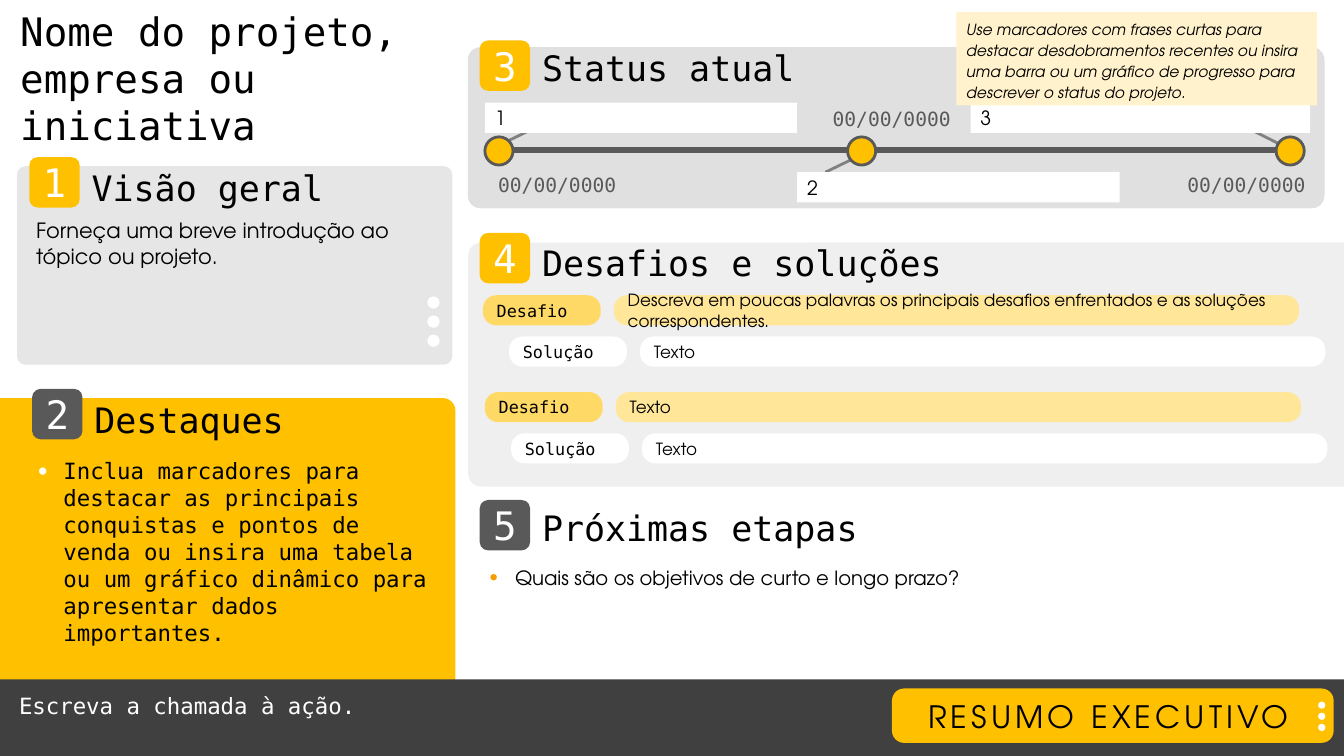
from typing import NamedTuple, Optional

from lxml.etree import SubElement
from pptx import Presentation
from pptx.dml.color import RGBColor
from pptx.enum.shapes import MSO_CONNECTOR, MSO_SHAPE as Preset
from pptx.enum.text import MSO_ANCHOR as Anchor, MSO_AUTO_SIZE, PP_ALIGN as Align
from pptx.oxml.ns import qn
from pptx.util import Cm, Pt

MONO = "DejaVu Sans Mono"
SANS = "TeX Gyre Adventor"

BLACK = RGBColor(0x00, 0x00, 0x00)
WHITE = RGBColor(0xFF, 0xFF, 0xFF)
AMBER = RGBColor(0xFF, 0xC0, 0x00)
AMBER_MID = RGBColor(0xFF, 0xD9, 0x66)
AMBER_LIGHT = RGBColor(0xFF, 0xE6, 0x99)
CREAM = RGBColor(0xFF, 0xF2, 0xCC)
ORANGE = RGBColor(0xF5, 0x9C, 0x00)
CHARCOAL = RGBColor(0x40, 0x40, 0x40)
DARK_GREY = RGBColor(0x59, 0x59, 0x59)
MID_GREY = RGBColor(0x80, 0x80, 0x80)
STATUS_GREY = RGBColor(0xE0, 0xE0, 0xE0)
OVERVIEW_GREY = RGBColor(0xE7, 0xE6, 0xE6)
PALE_GREY = RGBColor(0xEF, 0xEF, 0xEF)

NO_INSETS = (0, 0, 0, 0)
TEXT_INSETS = (0.25, 0.13, 0.25, 0.13)
FIELD_INSETS = (0.25, 0, 0.25, 0)
PILL_INSETS = (0.25, 0, 0, 0)


class Area(NamedTuple):
    """Left, top, width and height in centimetres."""
    left: float
    top: float
    width: float
    height: float


class Section(NamedTuple):
    title: str
    left: float
    top: float
    title_top: float
    title_width: float
    color: RGBColor


class Milestone(NamedTuple):
    field: Area
    dot_left: float
    date_left: float
    date_top: float
    leader: tuple[float, float, float, float]


class Challenge(NamedTuple):
    left: float
    top: float
    problem: str
    solution: str


SECTIONS = [
    Section("Visão geral", 0.74, 3.96, 4.27, 8.13, AMBER),
    Section("Destaques", 0.81, 9.8, 10.11, 8.15, DARK_GREY),
    Section("Status atual", 12.09, 1.02, 1.24, 10.44, AMBER),
    Section("Desafios e soluções", 12.09, 5.87, 6.15, 14.55, AMBER),
    Section("Próximas etapas", 12.09, 12.6, 12.83, 8.15, DARK_GREY),
]
MILESTONES = [
    Milestone(Area(12.22, 2.59, 7.87, 0.76), 12.22, 12.09, 4.24, (12.37, 3.76, 13.36, 3.28)),
    Milestone(Area(20.09, 4.34, 8.13, 0.76), 21.36, 20.52, 2.57, (20.8, 4.34, 21.79, 3.86)),
    Milestone(Area(24.46, 2.59, 8.56, 0.76), 32.16, 29.46, 4.24, (32.54, 3.78, 31.55, 3.28)),
]
CHALLENGES = [
    Challenge(12.17, 7.44, "Descreva em poucas palavras os principais desafios "
              "enfrentados e as soluções correspondentes.", "Texto"),
    Challenge(12.22, 9.88, "Texto", "Texto"),
]

deck = Presentation()
deck.slide_width, deck.slide_height = Cm(33.87), Cm(19.05)
page = deck.slides.add_slide(deck.slide_layouts[3])


def write(box, text: str, *, size: float, font: str = SANS, color: RGBColor = BLACK,
          align: Align = Align.LEFT, anchor: Anchor = Anchor.TOP, insets=TEXT_INSETS,
          italic: bool = False, tracking: float = 0, line_spacing: Optional[float] = None,
          bullet: Optional[RGBColor] = None) -> None:
    frame = box.text_frame
    frame.word_wrap = True
    frame.auto_size = MSO_AUTO_SIZE.NONE
    frame.vertical_anchor = anchor
    (frame.margin_left, frame.margin_top,
     frame.margin_right, frame.margin_bottom) = map(Cm, insets)
    para = frame.paragraphs[0]
    para.alignment = align
    para.space_before = Pt(0)
    if line_spacing:
        para.line_spacing = line_spacing
    if bullet is not None:
        para.space_after = Pt(6)
        add_bullet(box, bullet)
    span = para.add_run()
    span.text = text
    span.font.name, span.font.size = font, Pt(size)
    span.font.italic = italic
    span.font.color.rgb = color
    if tracking:
        for properties in box.element.iter(qn("a:rPr")):
            properties.set("spc", str(int(tracking * 100)))


def add_bullet(box, color: RGBColor) -> None:
    for properties in box.element.iter(qn("a:pPr")):
        properties.set("marL", str(Cm(0.64)))
        properties.set("indent", str(-Cm(0.64)))
        tint = SubElement(properties, qn("a:buClr"))
        SubElement(tint, qn("a:srgbClr"), val=str(color))
        SubElement(properties, qn("a:buSzPct"), val="120000")
        SubElement(properties, qn("a:buFont"), typeface="Arial")
        SubElement(properties, qn("a:buChar"), char="•")


def add_box(preset: Preset, area: Area, fill: RGBColor,
            corner: Optional[float] = None, outline: Optional[RGBColor] = None):
    box = page.shapes.add_shape(preset, *map(Cm, area))
    box.shadow.inherit = False
    box.fill.solid()
    box.fill.fore_color.rgb = fill
    if corner is not None:
        box.adjustments[0] = corner
    if outline is None:
        box.line.fill.background()
    else:
        box.line.color.rgb, box.line.width = outline, Pt(2)
    return box


def add_text(area: Area, text: str, **style) -> None:
    write(page.shapes.add_textbox(*map(Cm, area)), text, **style)


def add_line(ends: tuple[float, float, float, float], color: RGBColor, width: float) -> None:
    line = page.shapes.add_connector(MSO_CONNECTOR.STRAIGHT, *map(Cm, ends))
    line.line.color.rgb, line.line.width = color, Pt(width)
    SubElement(line.element.spPr, qn("a:effectLst"))


def add_dots(left: float, top: float, size: float, step: float) -> None:
    for index in range(3):
        add_box(Preset.OVAL, Area(left, top + index * step, size, size), WHITE)


def add_pill(left: float, top: float, width: float, fill: RGBColor, text: str, font: str) -> None:
    pill = add_box(Preset.ROUNDED_RECTANGLE, Area(left, top, width, 0.76), fill, corner=0.448)
    write(pill, text, size=12, font=font, anchor=Anchor.MIDDLE, insets=PILL_INSETS)


def fill_placeholder(index: int, area: Area, text: str, **style) -> None:
    box = page.placeholders[index]
    box.left, box.top, box.width, box.height = map(Cm, area)
    write(box, text, **style)
    box.element.getparent().append(box.element)  # bring to the front


# Background panels
challenge_panel = add_box(Preset.ROUND_2_SAME_RECTANGLE, Area(19.76, -1.85, 6.15, 22.07),
                          PALE_GREY, corner=0.054)
challenge_panel.rotation = 270
add_box(Preset.ROUNDED_RECTANGLE, Area(11.79, 1.19, 21.59, 4.06), STATUS_GREY, corner=0.079)
add_box(Preset.ROUND_1_RECTANGLE, Area(0, 10.03, 11.48, 9.02), AMBER, corner=0.036)
add_box(Preset.ROUNDED_RECTANGLE, Area(0.43, 4.19, 10.97, 5), OVERVIEW_GREY, corner=0.042)
add_dots(10.77, 7.47, 0.31, 0.48)

# Footer and badge
add_box(Preset.RECTANGLE, Area(0, 17.12, 33.87, 1.93), CHARCOAL)
add_text(Area(0.23, 17.3, 21.23, 0.94), "Escreva a chamada à ação.",
         size=16, font=MONO, color=WHITE)
add_box(Preset.ROUNDED_RECTANGLE, Area(22.48, 17.35, 11.13, 1.37), AMBER, corner=0.221)
add_text(Area(22.48, 17.45, 10.92, 1.19), "RESUMO EXECUTIVO",
         size=22, align=Align.CENTER, tracking=3)
add_dots(33.22, 17.68, 0.18, 0.28)

# Numbered section headings
for number, section in enumerate(SECTIONS, start=1):
    tile = add_box(Preset.ROUNDED_RECTANGLE, Area(section.left, section.top, 1.27, 1.27),
                   section.color)
    write(tile, str(number), size=28, font=MONO, color=WHITE, align=Align.CENTER,
          anchor=Anchor.MIDDLE, insets=NO_INSETS, tracking=-3)
    add_text(Area(section.left + 1.57, section.title_top, section.title_width, 0.91),
             section.title, size=25, font=MONO, anchor=Anchor.MIDDLE, insets=NO_INSETS)

# Overview
add_text(Area(0.66, 5.36, 9.88, 1.55), "Forneça uma breve introdução ao tópico ou projeto.", size=15)

# Status timeline
for milestone in MILESTONES:
    add_line(milestone.leader, MID_GREY, 2)
add_line((12.55, 3.78, 32.77, 3.78), DARK_GREY, 4)
for number, milestone in enumerate(MILESTONES, start=1):
    field = add_box(Preset.RECTANGLE, milestone.field, WHITE)
    write(field, str(number), size=14, anchor=Anchor.MIDDLE, insets=FIELD_INSETS)
    add_box(Preset.OVAL, Area(milestone.dot_left, 3.45, 0.71, 0.71), AMBER, outline=DARK_GREY)
    add_text(Area(milestone.date_left, milestone.date_top, 3.91, 0.86), "00/00/0000",
             size=14, font=MONO, color=DARK_GREY, align=Align.CENTER)

# Challenges, each with its solution indented below
for left, top, problem, solution in CHALLENGES:
    add_pill(left, top, 2.97, AMBER_MID, "Desafio", MONO)
    add_pill(left + 3.3, top, 17.27, AMBER_LIGHT, problem, SANS)
    add_pill(left + 0.66, top + 1.04, 2.97, WHITE, "Solução", MONO)
    add_pill(left + 3.96, top + 1.04, 17.27, WHITE, solution, SANS)

# Title and lists
fill_placeholder(0, Area(0.51, 0.18, 10.26, 3.2), "Nome do projeto, empresa ou iniciativa",
                 size=28, font=MONO, insets=NO_INSETS)
fill_placeholder(1, Area(0.71, 11.4, 10.44, 4.37),
                 "Inclua marcadores para destacar as principais conquistas e pontos de venda "
                 "ou insira uma tabela ou um gráfico dinâmico para apresentar dados importantes.",
                 size=16, font=MONO, bullet=WHITE)
fill_placeholder(2, Area(12.09, 14.12, 21.46, 0.86),
                 "Quais são os objetivos de curto e longo prazo?", size=14, bullet=ORANGE)

# Guidance note
note = add_box(Preset.RECTANGLE, Area(24.1, 0.3, 9.09, 2.36), CREAM)
write(note, "Use marcadores com frases curtas para destacar desdobramentos recentes ou insira "
      "uma barra ou um gráfico de progresso para descrever o status do projeto.",
      size=11, italic=True, line_spacing=1.15)

deck.save("out.pptx")
